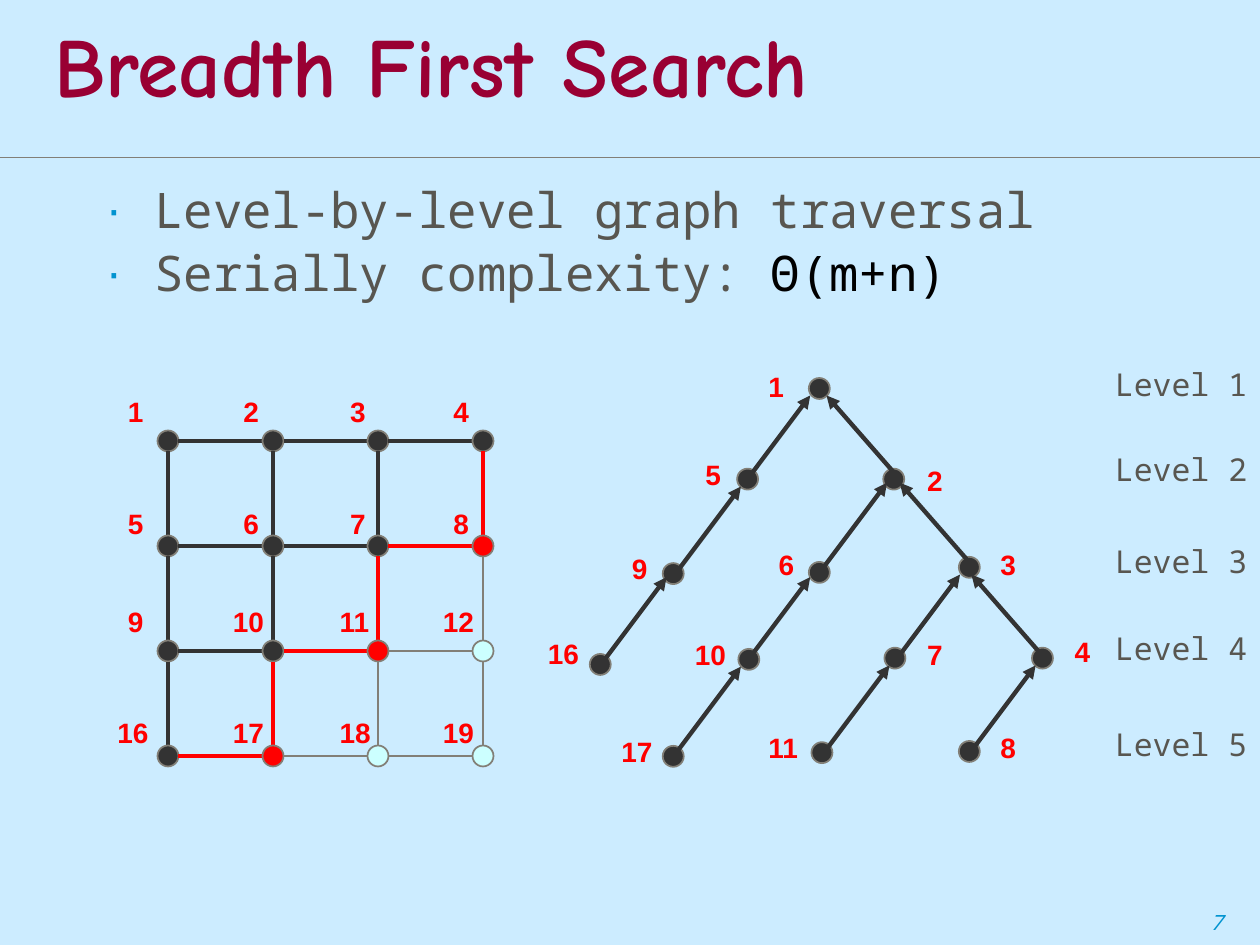
from dataclasses import dataclass
from itertools import product
from typing import Any, Optional

from lxml.etree import SubElement
from pptx import Presentation
from pptx.dml.color import RGBColor
from pptx.enum.shapes import MSO_CONNECTOR, MSO_SHAPE
from pptx.enum.text import MSO_ANCHOR, MSO_AUTO_SIZE, PP_ALIGN
from pptx.oxml.ns import qn
from pptx.util import Pt


@dataclass(frozen=True)
class Theme:
    background: str = "CCECFF"
    title: str = "990033"
    text: str = "585650"
    accent: str = "0093D0"
    formula: str = "000000"
    outline: str = "827F77"
    visited: str = "333333"
    frontier: str = "FF0000"
    unvisited: str = "CCFFFF"
    title_font: str = "Comic Neue"
    body_font: str = "Noto Sans Mono"
    label_font: str = "Arial"
    title_size: float = 48
    body_size: float = 28
    level_size: float = 18
    label_size: float = 16
    number_size: float = 12
    thin: float = 1
    thick: float = 2.5


@dataclass(frozen=True)
class TreeNode:
    number: int
    center: tuple[float, float]
    label: tuple[float, float]
    tip: Optional[tuple[float, float]] = None  # where the arrow meets the parent


THEME = Theme()
NODE = 12
RADIUS = NODE / 2

# Grid: four by four nodes, visited along diagonals
GRID_LEFT, GRID_TOP, PITCH, GRID_SIZE = 96, 252, 60, 4
FRONTIER = 4
ROW_STARTS = (1, 5, 9, 16)
LABEL_LEFTS = (66, 132, 193, 252)
LABEL_TOPS = (222, 286, 342, 405.5)

# Search tree
LEFT_RUN, RIGHT_RUN, DROP = -36, 42, 48
TREE = (
    TreeNode(1, (468.2, 222), (432, 207.4)),
    TreeNode(5, (427.2, 273.8), (396, 257.8), (463, 226)),
    TreeNode(2, (510.7, 273.8), (522.7, 261.4), (472.3, 226)),
    TreeNode(9, (384.7, 327.8), (354, 311.8), (423.4, 278)),
    TreeNode(6, (468.2, 327.1), (437.8, 309.6), (506.9, 275.8)),
    TreeNode(3, (553.9, 324.2), (564.5, 309.6), (514.1, 275.8)),
    TreeNode(16, (343, 379.7), (306, 360), (380.9, 329.8)),
    TreeNode(10, (427.9, 376.8), (390, 360.7), (463, 329.8)),
    TreeNode(7, (511.4, 376.1), (522.7, 360.7), (548.6, 328.3)),
    TreeNode(4, (595.7, 376.1), (607, 359.3), (555.1, 328.3)),
    TreeNode(17, (384.7, 432.2), (348, 416), (423.4, 380.9)),
    TreeNode(11, (469.7, 430.1), (432, 414), (508.3, 380.2)),
    TreeNode(8, (553.9, 429.4), (564.5, 414), (591.8, 380.2)),
)
LEVEL_TOPS = (209.5, 257.8, 310.3, 360, 414.7)


def apply(target: Any, values: dict[str, Any]) -> None:
    for name, value in values.items():
        setattr(target, name, value)


def add_run(paragraph: Any, text: str, font: str, size: float, color: str, **values: Any) -> None:
    run = paragraph.add_run()
    run.text = text
    apply(run.font, {"name": font, "size": Pt(size), **values})
    run.font.color.rgb = RGBColor.from_string(color)


def add_text_box(slide: Any, left: float, top: float, width: float, height: float, **values: Any) -> Any:
    frame = slide.shapes.add_textbox(Pt(left), Pt(top), Pt(width), Pt(height)).text_frame
    apply(frame, {"word_wrap": True, **values})
    return frame.paragraphs[0]


def add_line(slide: Any, start: tuple[float, float], end: tuple[float, float],
             color: str, width: float, arrow: bool = False) -> None:
    points = [Pt(value) for value in (*start, *end)]
    connector = slide.shapes.add_connector(MSO_CONNECTOR.STRAIGHT, *points)
    connector.line.color.rgb = RGBColor.from_string(color)
    connector.line.width = Pt(width)
    if arrow:
        SubElement(connector.line._get_or_add_ln(), qn("a:headEnd"), type="triangle")
    SubElement(connector._element.spPr, qn("a:effectLst"))


def add_node(slide: Any, center: tuple[float, float], color: str) -> None:
    left, top = (Pt(value - RADIUS) for value in center)
    shape = slide.shapes.add_shape(MSO_SHAPE.OVAL, left, top, Pt(NODE), Pt(NODE))
    shape.shadow.inherit = False
    shape.fill.solid()
    shape.fill.fore_color.rgb = RGBColor.from_string(color)
    shape.line.color.rgb = RGBColor.from_string(THEME.outline)
    shape.line.width = Pt(THEME.thin)


def add_label(slide: Any, number: int, left: float, top: float) -> None:
    width = 23 if number < 10 else 32.4
    paragraph = add_text_box(slide, left, top, width, 26.6, word_wrap=False,
                             auto_size=MSO_AUTO_SIZE.SHAPE_TO_FIT_TEXT)
    add_run(paragraph, str(number), THEME.label_font, THEME.label_size, THEME.frontier, bold=True)


def place(shape: Any, left: float, top: float, width: float, height: float) -> None:
    apply(shape, {"left": Pt(left), "top": Pt(top), "width": Pt(width), "height": Pt(height)})


def add_bullet(paragraph: Any, *parts: tuple[str, str]) -> None:
    paragraph.line_spacing = 0.9
    properties = paragraph._p.get_or_add_pPr()
    properties.set("marL", str(Pt(27)))
    properties.set("indent", str(Pt(-27)))
    SubElement(SubElement(properties, qn("a:buClr")), qn("a:srgbClr"), val=THEME.accent)
    SubElement(properties, qn("a:buChar"), char="∙")
    for text, color in parts:
        add_run(paragraph, text, THEME.body_font, THEME.body_size, color)


def grid_point(column: int, row: int) -> tuple[float, float]:
    return GRID_LEFT + column * PITCH, GRID_TOP + row * PITCH


def state_color(distance: int) -> str:
    if distance > FRONTIER:
        return THEME.unvisited
    return THEME.frontier if distance == FRONTIER else THEME.visited


def draw_grid(slide: Any) -> None:
    last = GRID_SIZE - 1
    for index in range(GRID_SIZE):
        add_line(slide, grid_point(index, 0), grid_point(index, last), THEME.outline, THEME.thin)
        add_line(slide, grid_point(0, index), grid_point(last, index), THEME.outline, THEME.thin)
    for row, column in product(range(GRID_SIZE), repeat=2):
        x, y = grid_point(column, row)
        color = state_color(row + column)
        # Traversed edges from the left and from above
        if row + column <= FRONTIER:
            if column:
                add_line(slide, (x - PITCH + RADIUS, y), (x - RADIUS, y), color, THEME.thick)
            if row:
                add_line(slide, (x, y - PITCH + RADIUS), (x, y - RADIUS), color, THEME.thick)
        add_node(slide, (x, y), color)
        number = ROW_STARTS[row] + column
        add_label(slide, number, LABEL_LEFTS[column] - (6 if number > 9 else 0), LABEL_TOPS[row])


def draw_tree(slide: Any) -> None:
    for node in TREE:
        add_node(slide, node.center, THEME.visited)
        add_label(slide, node.number, *node.label)
    for node in TREE:
        if node.tip:
            x, y = node.tip
            run = LEFT_RUN if node.center[0] < x else RIGHT_RUN
            add_line(slide, node.tip, (x + run, y + DROP), THEME.visited, THEME.thick, arrow=True)


def main() -> None:
    presentation = Presentation()
    apply(presentation, {"slide_width": Pt(720), "slide_height": Pt(540)})
    slide = presentation.slides.add_slide(presentation.slide_layouts[1])
    slide.background.fill.solid()
    slide.background.fill.fore_color.rgb = RGBColor.from_string(THEME.background)

    # Slide number and rule under the title
    number = add_text_box(slide, 0, 516, 720, 21.6, margin_left=Pt(691.2),
                          vertical_anchor=MSO_ANCHOR.BOTTOM)
    add_run(number, "7", THEME.body_font, THEME.number_size, THEME.accent, italic=True)
    add_line(slide, (0, 90), (720, 90), THEME.outline, 0.75)

    # Title and bullets
    title, body = slide.shapes.title, slide.placeholders[1]
    place(title, 24, 5, 696, 72)
    place(body, 54, 103, 611, 395)
    for shape, anchor in ((title, MSO_ANCHOR.MIDDLE), (body, MSO_ANCHOR.TOP)):
        apply(shape.text_frame, {"vertical_anchor": anchor, "auto_size": MSO_AUTO_SIZE.NONE})
    heading = title.text_frame.paragraphs[0]
    apply(heading, {"alignment": PP_ALIGN.LEFT, "line_spacing": 0.86})
    add_run(heading, "Breadth First Search", THEME.title_font, THEME.title_size, THEME.title, bold=True)
    add_bullet(body.text_frame.paragraphs[0], ("Level-by-level graph traversal", THEME.text))
    add_bullet(body.text_frame.add_paragraph(),
               ("Serially complexity: ", THEME.text), ("Θ(m+n)", THEME.formula))

    draw_grid(slide)
    draw_tree(slide)

    # Level captions
    for level, top in enumerate(LEVEL_TOPS, start=1):
        caption = add_text_box(slide, 630, top, 108, 24.5)
        caption.line_spacing = 0.8
        add_run(caption, f"Level {level}", THEME.body_font, THEME.level_size, THEME.text)

    presentation.save("out.pptx")


if __name__ == "__main__":
    main()
